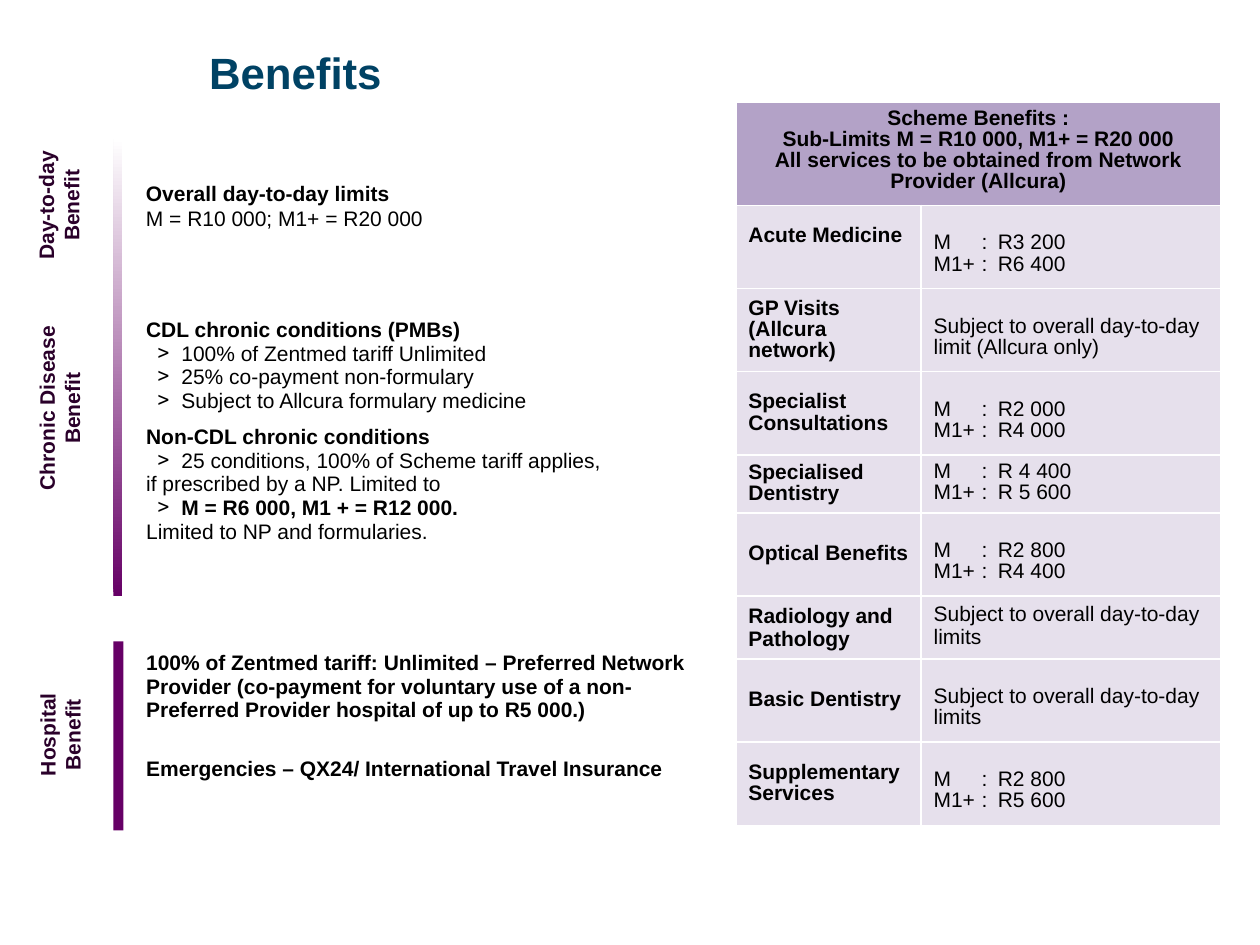
from dataclasses import dataclass
from typing import Optional

from lxml.etree import SubElement
from pptx import Presentation
from pptx.dml.color import RGBColor
from pptx.enum.shapes import MSO_SHAPE
from pptx.enum.text import MSO_ANCHOR, MSO_AUTO_SIZE, PP_ALIGN
from pptx.oxml import parse_xml
from pptx.oxml.ns import nsdecls, qn
from pptx.util import Inches, Pt

FONT = "Arial"
NAVY = RGBColor(0x00, 0x42, 0x64)
PURPLE = RGBColor(0x66, 0x00, 0x66)
PLUM = RGBColor(0x2A, 0x00, 0x2A)
LILAC = RGBColor(0xB3, 0xA2, 0xC7)
MIST = RGBColor(0xE6, 0xE0, 0xEC)
BLACK = RGBColor(0, 0, 0)
WHITE = RGBColor(0xFF, 0xFF, 0xFF)

CELL = Inches(0.1)
NO_STYLE = "{2D5ABB26-0587-4C30-8999-92F81FD0307C}"
VALUE_TABS = (0.38, 0.51)
DROP = 0.22


@dataclass
class Frame:
    column: float
    row: float
    columns: float
    rows: float

    def place(self) -> list[int]:
        return [round(CELL * part) for part in (self.column, self.row, self.columns, self.rows)]


@dataclass
class Line:
    text: str
    bold: bool = False
    bullet: bool = False


@dataclass
class Benefit:
    name: str
    values: list[str]
    rows: float = 6.6
    top: float = DROP
    bottom: float = 0.05
    spacing: Optional[float] = 0.9


BENEFITS = [
    Benefit("Acute Medicine", ["M\t:\tR3 200", "M1+\t:\tR6 400"], bottom=DROP),
    Benefit("GP Visits (Allcura network)", ["Subject to overall day-to-day limit (Allcura only)"]),
    Benefit("Specialist Consultations", ["M\t:\tR2 000", "M1+\t:\tR4 000"]),
    Benefit("Specialised Dentistry", ["M\t:\tR 4 400", "M1+\t:\tR 5 600"], rows=4.6, top=0.05),
    Benefit("Optical Benefits", ["M\t:\tR2 800", "M1+\t:\tR4 400"]),
    Benefit("Radiology and Pathology", ["Subject to overall day-to-day limits"],
            rows=5, top=0.05, spacing=None),
    Benefit("Basic Dentistry", ["Subject to overall day-to-day limits"]),
    Benefit("Supplementary Services", ["M\t:\tR2 800", "M1+\t:\tR5 600"]),
]
HEADER = [
    Line("Scheme Benefits :", True),
    Line("Sub-Limits M = R10 000, M1+ = R20 000", True),
    Line("All services to be obtained from Network Provider (Allcura)", True),
]
CHRONIC = [
    [
        Line("CDL chronic conditions (PMBs)", True),
        Line("100% of Zentmed tariff Unlimited", bullet=True),
        Line("25% co-payment non-formulary", bullet=True),
        Line("Subject to Allcura formulary medicine", bullet=True),
    ],
    [
        Line("Non-CDL chronic conditions", True),
        Line("25 conditions, 100% of Scheme tariff applies,", bullet=True),
        Line("if prescribed by a NP. Limited to"),
        Line("M = R6 000, M1 + = R12 000.", True, True),
        Line("Limited to NP and formularies."),
    ],
]
HOSPITAL = [
    [Line("100% of Zentmed tariff: Unlimited – Preferred Network Provider (co-payment for "
          "voluntary use of a non-Preferred Provider hospital of up to R5 000.)", True)],
    [Line("Emergencies – QX24/ International Travel Insurance", True)],
    [], [], [],
]
SIDE_LABELS = [
    (["Hospital", "Benefit"], Frame(0.4, 55.8, 8.7, 5)),
    (["Chronic Disease", "Benefit"], Frame(-2.9, 29.9, 15.2, 5)),
    (["Day-to-day", "Benefit"], Frame(-0.7, 13.8, 10.7, 5)),
]


def write(text_frame, lines: list[Line], size: float = 12, color: RGBColor = BLACK,
          align: PP_ALIGN = PP_ALIGN.LEFT, spacing: Optional[float] = None,
          tabs: tuple[float, ...] = (), indent: float = 0) -> None:
    for index, line in enumerate(lines):
        para = text_frame.add_paragraph() if index else text_frame.paragraphs[0]
        para.alignment = align
        if spacing:
            para.line_spacing = spacing
        properties = para._p.get_or_add_pPr()
        if indent:
            properties.set("marL", str(Inches(indent)))
        if line.bullet:
            properties.set("marL", str(Inches(0.28)))
            properties.set("indent", str(Inches(-0.19)))
            SubElement(properties, qn("a:buChar"), char=">")
        if tabs:
            stops = SubElement(properties, qn("a:tabLst"))
            for stop in tabs:
                SubElement(stops, qn("a:tab"), pos=str(Inches(stop)), algn="l")
        span = para.add_run()
        span.text = line.text
        span.font.name, span.font.size, span.font.bold = FONT, Pt(size), line.bold
        span.font.color.rgb = color


def add_text(page, frame: Frame, lines: list[Line], rotation: float = 0, wrap: bool = True,
             **style) -> None:
    box = page.shapes.add_textbox(*frame.place())
    box.rotation = rotation
    box.text_frame.word_wrap = wrap
    box.text_frame.auto_size = MSO_AUTO_SIZE.SHAPE_TO_FIT_TEXT
    write(box.text_frame, lines, **style)


def add_bar(page, frame: Frame):
    bar = page.shapes.add_shape(MSO_SHAPE.RECTANGLE, *frame.place())
    bar.shadow.inherit = False
    bar.line.fill.background()
    bar.fill.solid()
    bar.fill.fore_color.rgb = PURPLE
    return bar


def add_grid(page, column: float, row: float, widths: list[float], heights: list[float]):
    frame = Frame(column, row, sum(widths), sum(heights))
    table = page.shapes.add_table(len(heights), len(widths), *frame.place()).table
    table.first_row = table.horz_banding = False
    table._tbl.tblPr.find(qn("a:tableStyleId")).text = NO_STYLE
    for grid_column, width in zip(table.columns, widths):
        grid_column.width = round(CELL * width)
    for grid_row, height in zip(table.rows, heights):
        grid_row.height = round(CELL * height)
    return table


def paint(cell, fill: RGBColor) -> None:
    cell.fill.solid()
    cell.fill.fore_color.rgb = fill
    for index, side in enumerate(("lnL", "lnR", "lnT", "lnB")):
        border = parse_xml(f'<a:{side} {nsdecls("a")} w="{Pt(1)}"><a:solidFill>'
                           f'<a:srgbClr val="{WHITE}"/></a:solidFill></a:{side}>')
        cell._tc.get_or_add_tcPr().insert(index, border)


def add_list(page, row: float, width: float, heights: list[float],
             entries: list[list[Line]]) -> None:
    table = add_grid(page, 10.6, row, [width], heights)
    for index, lines in enumerate(entries):
        cell = table.cell(index, 0)
        if not lines:
            cell.margin_top = cell.margin_bottom = 0
        write(cell.text_frame, lines)


def add_benefits(page) -> None:
    heights = [8.2] + [benefit.rows for benefit in BENEFITS]
    table = add_grid(page, 58.4, 8.1, [14.7, 23.8], heights)
    header = table.cell(0, 0)
    header.merge(table.cell(0, 1))
    write(header.text_frame, HEADER, align=PP_ALIGN.CENTER, spacing=0.9)
    for index, cell in enumerate(table.iter_cells()):
        paint(cell, LILAC if index < 2 else MIST)
    for index, benefit in enumerate(BENEFITS, 1):
        name, value = table.cell(index, 0), table.cell(index, 1)
        name.vertical_anchor = MSO_ANCHOR.MIDDLE
        name.margin_bottom = Inches(benefit.bottom)
        value.margin_top = Inches(benefit.top)
        write(name.text_frame, [Line(benefit.name, True)], spacing=benefit.spacing)
        write(value.text_frame, [Line(text) for text in benefit.values],
              spacing=benefit.spacing, tabs=VALUE_TABS)


def main() -> None:
    deck = Presentation()
    deck.slide_width, deck.slide_height = CELL * 100, CELL * 75
    page = deck.slides.add_slide(deck.slide_layouts[5])
    title = page.shapes.title
    title.left, title.top, title.width, title.height = Frame(5, 3.1, 54.9, 9.7).place()
    title.text_frame.vertical_anchor = MSO_ANCHOR.TOP
    write(title.text_frame, [Line("Benefits", True)], size=25, color=NAVY, indent=1.06)

    add_list(page, 51.2, 47.3, [8.4, 2.8, 3.5, 3.5, 3.5], HOSPITAL)
    add_list(page, 24.8, 39.4, [8.5, 11.5], CHRONIC)
    add_bar(page, Frame(9, 50.9, 0.8, 15))
    fade = add_bar(page, Frame(9, 11, 0.7, 36.3)).fill
    fade.gradient()
    fade.gradient_angle = 90
    for stop, color in zip(fade.gradient_stops, (PURPLE, WHITE)):
        stop.color.rgb = color
    for words, frame in SIDE_LABELS:
        add_text(page, frame, [Line(word, True) for word in words], rotation=270,
                 wrap=False, color=PLUM, align=PP_ALIGN.CENTER)
    add_text(page, Frame(10.6, 13.8, 34.1, 5),
             [Line("Overall day-to-day limits", True), Line("M = R10 000; M1+ = R20 000")])
    add_benefits(page)
    deck.save("out.pptx")


if __name__ == "__main__":
    main()
